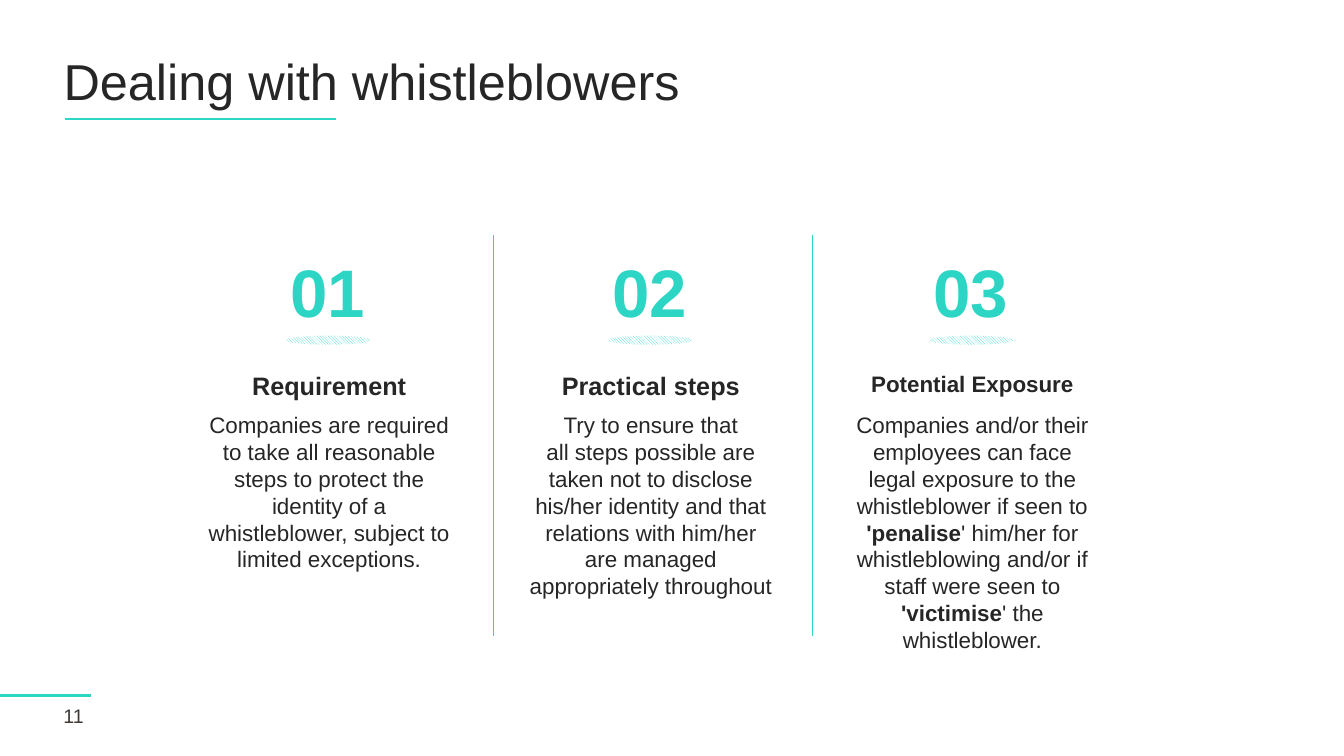
from dataclasses import dataclass

from lxml.etree import SubElement
from pptx import Presentation
from pptx.dml.color import RGBColor
from pptx.enum.dml import MSO_PATTERN
from pptx.enum.shapes import MSO_CONNECTOR, MSO_SHAPE
from pptx.enum.text import MSO_ANCHOR, MSO_AUTO_SIZE, PP_ALIGN
from pptx.oxml.ns import qn
from pptx.util import Emu, Pt


@dataclass(frozen=True)
class Theme:
    """Colours, font and type sizes of the deck."""
    accent: RGBColor = RGBColor.from_string("2CD5C4")
    ink: RGBColor = RGBColor.from_string("262626")
    footer: RGBColor = RGBColor.from_string("3E3935")
    white: RGBColor = RGBColor.from_string("FFFFFF")
    font: str = "Arial"
    title: int = 36
    number: int = 48
    heading: int = 18
    body: int = 16
    page_number: int = 14


THEME = Theme()
PX = 9144
COLUMN_STEP = 319
COLUMNS = [
    ("01", "Requirement", THEME.heading, [
        ["Companies are required to take all reasonable steps to protect "
         "the identity of a whistleblower, subject to limited exceptions."],
    ]),
    ("02", "Practical steps", THEME.heading, [
        ["Try to ensure that"],
        ["all steps possible are taken not to disclose his/her identity and that"],
        ["relations with him/her are managed appropriately throughout"],
    ]),
    ("03", "Potential Exposure", THEME.body, [
        ["Companies and/or their employees can face legal exposure to the "
         "whistleblower if seen to ", "'penalise",
         "' him/her for whistleblowing and/or if staff were seen to ",
         "'victimise", "' the whistleblower."],
    ]),
]


def px(*lengths):
    """Turn px lengths into EMU."""
    return [Emu(length * PX) for length in lengths]


def style(span, size, color, bold=False):
    """Format one run."""
    span.font.name = THEME.font
    span.font.size = Pt(size)
    span.font.color.rgb = color
    span.font.bold = bold


def add_title(page, text):
    """Fill and place the title placeholder."""
    box = page.shapes.title
    box.left, box.top, box.width, box.height = px(53, 40, 1224, 88)
    frame = box.text_frame
    frame.text = text
    frame.vertical_anchor = MSO_ANCHOR.MIDDLE
    para = frame.paragraphs[0]
    para.alignment = PP_ALIGN.LEFT
    para.line_spacing = 0.9
    style(para.runs[0], THEME.title, THEME.ink)


def add_text(page, place, paragraphs, size, color, bold=False, align=PP_ALIGN.CENTER):
    """Add a text box; every second span of a paragraph is bold."""
    frame = page.shapes.add_textbox(*px(*place)).text_frame
    frame.word_wrap = True
    for index, spans in enumerate(paragraphs):
        para = frame.add_paragraph() if index else frame.paragraphs[0]
        para.alignment = align
        for order, text in enumerate(spans):
            span = para.add_run()
            span.text = text
            style(span, size, color, bold or order % 2 == 1)
    return frame


def add_number(page, place, text):
    """Add a large column number without margins."""
    frame = add_text(page, place, [[text]], THEME.number, THEME.accent, True, PP_ALIGN.LEFT)
    frame.margin_left = frame.margin_right = frame.margin_top = frame.margin_bottom = 0
    frame.word_wrap = False
    frame.auto_size = MSO_AUTO_SIZE.SHAPE_TO_FIT_TEXT


def add_line(page, ends, width):
    """Add a straight accent line."""
    line = page.shapes.add_connector(MSO_CONNECTOR.STRAIGHT, *px(*ends))
    line.line.color.rgb = THEME.accent
    line.line.width = Pt(width)
    SubElement(line._element.spPr, qn("a:effectLst"))


def add_hatched_ellipse(page, place):
    """Add the hatched ellipse under a number."""
    ellipse = page.shapes.add_shape(MSO_SHAPE.OVAL, *px(*place))
    ellipse.shadow.inherit = False
    ellipse.fill.patterned()
    ellipse.fill.pattern = MSO_PATTERN.DARK_DOWNWARD_DIAGONAL
    ellipse.fill.fore_color.rgb = THEME.accent
    ellipse.fill.back_color.rgb = THEME.white
    ellipse.line.fill.background()


def add_column(page, left, number, heading, heading_size, body):
    """Add a number, ellipse, heading and body text."""
    add_number(page, (left + 93, 248, 75, 81), number)
    add_hatched_ellipse(page, (left + 89, 333, 84, 9))
    add_text(page, (left + 15, 362, 233, 40), [[heading]], heading_size, THEME.ink, True)
    add_text(page, (left, 403, 263, 252), body, THEME.body, THEME.ink)


def main():
    """Build the slide and save it."""
    deck = Presentation()
    deck.slide_width, deck.slide_height = px(1333, 750)
    page = deck.slides.add_slide(deck.slide_layouts[5])
    add_title(page, "Dealing with whistleblowers")
    add_line(page, (64, 118, 333, 118), 1.5)
    add_line(page, (0, 690, 90, 690), 1.5)
    frame = add_text(page, (53, 698, 57, 24), [["11"]], THEME.page_number,
                     THEME.footer, align=PP_ALIGN.LEFT)
    frame.vertical_anchor = MSO_ANCHOR.MIDDLE
    for index, column in enumerate(COLUMNS):
        add_column(page, 195 + index * COLUMN_STEP, *column)
    for x in (489, 806):
        add_line(page, (x, 631, x, 233), 0.5)
    deck.save("out.pptx")


if __name__ == "__main__":
    main()
